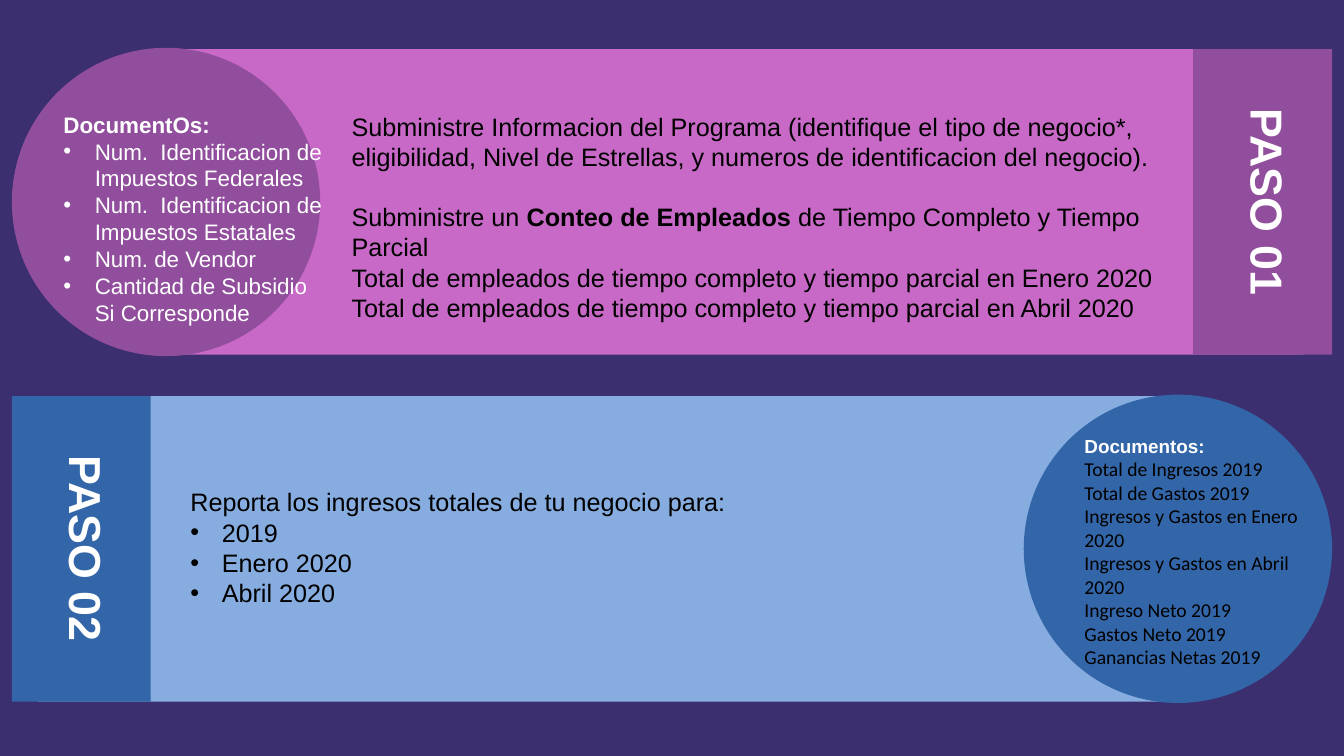
from lxml.etree import SubElement
from pptx import Presentation
from pptx.dml.color import RGBColor
from pptx.enum.shapes import MSO_SHAPE as Shape
from pptx.enum.text import MSO_AUTO_SIZE as AutoSize, PP_ALIGN as Align
from pptx.oxml.ns import qn
from pptx.util import Cm, Pt

NAVY = RGBColor(0x3B, 0x2F, 0x70)
PINK = RGBColor(0xC8, 0x69, 0xC7)
PURPLE = RGBColor(0x91, 0x4E, 0x9D)
SKY = RGBColor(0x86, 0xAC, 0xE0)
BLUE = RGBColor(0x33, 0x66, 0xA8)
WHITE = RGBColor(0xFF, 0xFF, 0xFF)
BLACK = RGBColor(0, 0, 0)

BAND_LEFT, BAND_WIDTH, BAND_HEIGHT = Cm(0.3), Cm(33.27), Cm(7.7)
BAR_WIDTH, TAB_WIDTH, CIRCLE_SIZE = Cm(29.16), Cm(3.5), Cm(7.77)
LABEL_INSET, LABEL_WIDTH = Cm(0.82), Cm(1.88)

LABEL = dict(name="Arial", size=Pt(32), bold=True, color=WHITE)
BODY = dict(name="Arial", size=Pt(18), bold=False, color=BLACK)
STRONG = {**BODY, "bold": True}
LISTED = dict(name="Arial", size=Pt(16), bold=False, color=WHITE)
LISTED_HEAD = {**LISTED, "bold": True}
FIGURES = dict(name="Calibri", size=Pt(14), bold=False, color=BLACK)
FIGURES_HEAD = dict(name="Arial", size=Pt(13.5), bold=True, color=WHITE)


def add_block(slide, preset, box, color):
    """Draw a flat filled shape without outline."""
    block = slide.shapes.add_shape(preset, *box)
    block.shadow.inherit = False
    block.fill.solid()
    block.fill.fore_color.rgb = color
    block.line.fill.background()


def add_run(paragraph, text, style):
    """Append text formatted from a dict of font values."""
    run = paragraph.add_run()
    run.text = text
    for key, value in style.items():
        if key == "color":
            run.font.color.rgb = value
        else:
            setattr(run.font, key, value)


def add_bullet(paragraph):
    """Give a paragraph a hanging round bullet."""
    properties = paragraph._p.get_or_add_pPr()
    properties.set("marL", str(Cm(0.79)))
    properties.set("indent", str(-Cm(0.79)))
    SubElement(properties, qn("a:buFont")).set("typeface", "Arial")
    SubElement(properties, qn("a:buChar")).set("char", "•")


def add_text(slide, box, paragraphs, bulleted=(), gap_before=None):
    """Write paragraphs, each a list of (text, style) runs, in a box."""
    frame = slide.shapes.add_textbox(*box).text_frame
    frame.word_wrap = True
    frame.auto_size = AutoSize.SHAPE_TO_FIT_TEXT
    for index, runs in enumerate(paragraphs):
        paragraph = frame.paragraphs[0] if index == 0 else frame.add_paragraph()
        if index == gap_before:
            paragraph.space_before = Pt(21.5)
        if index in bulleted:
            add_bullet(paragraph)
        for text, style in runs:
            add_run(paragraph, text, style)
    return frame


def add_step(slide, top, bar_inset, label, light, dark, circle_first):
    """Place one band: bar, circle at one end and labelled tab at the other."""
    far_circle = BAND_LEFT + BAND_WIDTH - CIRCLE_SIZE
    far_tab = BAND_LEFT + BAND_WIDTH - TAB_WIDTH
    circle_left = BAND_LEFT if circle_first else far_circle
    tab_left = far_tab if circle_first else BAND_LEFT
    circle_top = top - (CIRCLE_SIZE - BAND_HEIGHT) // 2
    bar_box = (BAND_LEFT + bar_inset, top, BAR_WIDTH, BAND_HEIGHT)
    circle_box = (circle_left, circle_top, CIRCLE_SIZE, CIRCLE_SIZE)
    tab_box = (tab_left, top, TAB_WIDTH, BAND_HEIGHT)
    add_block(slide, Shape.RECTANGLE, bar_box, light)
    add_block(slide, Shape.OVAL, circle_box, dark)
    add_block(slide, Shape.RECTANGLE, tab_box, dark)
    label_box = (tab_left + LABEL_INSET, top, LABEL_WIDTH, BAND_HEIGHT)
    frame = add_text(slide, label_box, [[(label, LABEL)]])
    frame.paragraphs[0].alignment = Align.CENTER
    frame._txBody.bodyPr.set("vert", "vert")


def add_program_step(slide, top):
    """Build step 1: program information and employee count."""
    add_step(slide, top, Cm(3.38), "PASO 01", PINK, PURPLE, True)
    staff = "Total de empleados de tiempo completo y tiempo parcial en "
    add_text(slide, (Cm(8.61), top + Cm(1.43), Cm(20.73), Cm(5.64)), [
        [("Subministre Informacion del Programa (identifique el tipo de negocio*, "
          "eligibilidad, Nivel de Estrellas, y numeros de identificacion del negocio).", BODY)],
        [("Subministre un ", BODY), ("Conteo de Empleados", STRONG),
         (" de Tiempo Completo y Tiempo Parcial", BODY)],
        *[[(staff + month, BODY)] for month in ("Enero 2020", "Abril 2020")],
    ], gap_before=1)
    documents = ["Num.  Identificacion de Impuestos Federales",
                 "Num.  Identificacion de Impuestos Estatales",
                 "Num. de Vendor", "Cantidad de Subsidio Si Corresponde"]
    add_text(slide, (Cm(1.35), top + Cm(1.43), Cm(7.06), Cm(6.5)),
             [[("DocumentOs:", LISTED_HEAD)], *[[(item, LISTED)] for item in documents]],
             bulleted=range(1, 5))


def add_income_step(slide, top):
    """Build step 2: total income and its documents."""
    add_step(slide, top, Cm(0.66), "PASO 02", SKY, BLUE, False)
    periods = ["Reporta los ingresos totales de tu negocio para:",
               "2019", "Enero 2020", "Abril 2020"]
    add_text(slide, (Cm(4.55), top + Cm(2.16), Cm(20.93), Cm(3.33)),
             [[(item, BODY)] for item in periods], bulleted=range(1, 4))
    figures = ["Total de Ingresos 2019", "Total de Gastos 2019",
               "Ingresos y Gastos en Enero 2020", "Ingresos y Gastos en Abril 2020",
               "Ingreso Neto 2019", "Gastos Neto 2019", "Ganancias Netas 2019"]
    add_text(slide, (Cm(27.08), top + Cm(0.84), Cm(6.4), Cm(6.4)),
             [[("Documentos:", FIGURES_HEAD)], *[[(item, FIGURES)] for item in figures]])


def main():
    """Create the two-step slide and save it."""
    deck = Presentation()
    deck.slide_width, deck.slide_height = Cm(33.87), Cm(19.05)
    slide = deck.slides.add_slide(deck.slide_layouts[6])
    slide.background.fill.solid()
    slide.background.fill.fore_color.rgb = NAVY
    add_program_step(slide, Cm(1.24))
    add_income_step(slide, Cm(9.98))
    deck.save("out.pptx")


if __name__ == "__main__":
    main()
